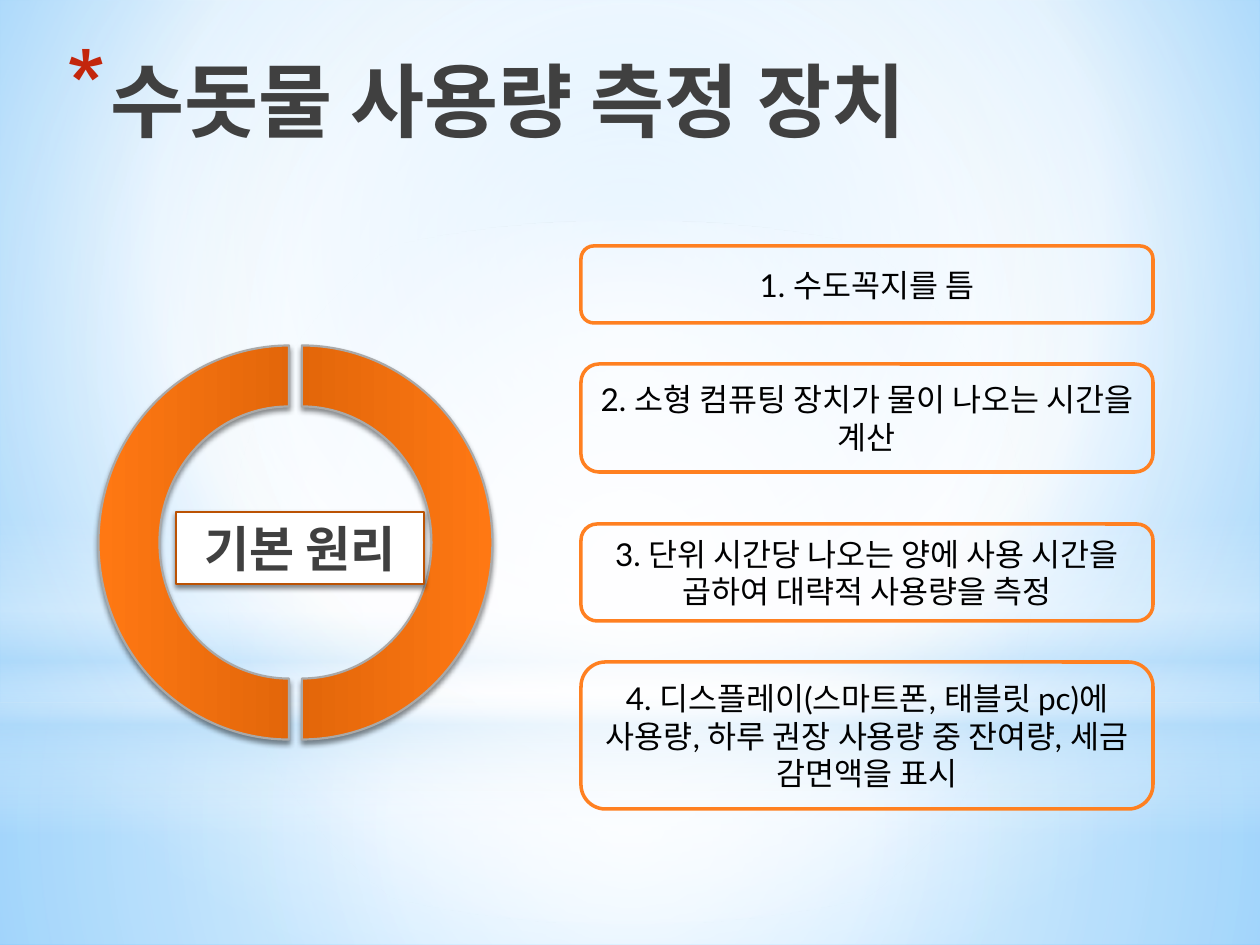
from pptx import Presentation, util as u
from pptx.dml import color
from pptx.enum import shapes, text
from pptx.oxml import ns, parse_xml

SCALE = 914400 / 126
WIDTH, HEIGHT = 1260, 945
FONT = "Lato"
CENTER = (50, 50, 50, 50)
STEPS = [
    (246, 77, "1. 수도꼭지를 틈"),
    (364, 108, "2. 소형 컴퓨팅 장치가 물이 나오는 시간을 계산"),
    (524, 97, "3. 단위 시간당 나오는 양에 사용 시간을 곱하여 대략적 사용량을 측정"),
    (662, 147, "4. 디스플레이(스마트폰, 태블릿 pc)에 사용량, 하루 권장 사용량 중 잔여량, 세금 감면액을 표시"),
]


def px(length):
    """Turn pixels into EMU."""
    return u.Emu(round(length * SCALE))


def rgb(value):
    """Turn a hex string into a colour."""
    return color.RGBColor.from_string(value)


def xml(markup):
    """Parse one drawing element given without its namespace."""
    head, rest = markup.split(" ", 1)
    return parse_xml(f"{head} {ns.nsdecls('a')} {rest}")


def set_gradient(fill, element, stops, center=None):
    """Fill with (position, colour, opacity) stops, round a centre or downwards."""
    fill.gradient()
    marks = "".join(
        f'<a:gs pos="{position * 1000}"><a:srgbClr val="{value}">'
        f'<a:alpha val="{opacity * 1000}"/></a:srgbClr></a:gs>'
        for position, value, opacity in stops
    )
    direction = '<a:lin ang="5400000" scaled="0"/>'
    if center:
        sides = " ".join(f'{side}="{value * 1000}"' for side, value in zip("ltrb", center))
        direction = f'<a:path path="circle"><a:fillToRect {sides}/></a:path>'
    default = element.find(".//" + ns.qn("a:gradFill"))
    default.getparent().replace(
        default,
        xml(f'<a:gradFill rotWithShape="1"><a:gsLst>{marks}</a:gsLst>{direction}</a:gradFill>'),
    )


def add_shape(container, kind, box, line=None, width=1.25):
    """Add a preset shape without fill or shadow."""
    shape = container.add_shape(kind, *map(px, box))
    shape.shadow.inherit = False
    shape.fill.background()
    if line:
        shape.line.color.rgb = rgb(line)
        shape.line.width = u.Pt(width)
    else:
        shape.line.fill.background()
    return shape


def add_shadow(shape):
    """Give a shape a soft shadow below it."""
    shape.element.spPr.find(ns.qn("a:effectLst")).append(xml(
        '<a:outerShdw blurRad="39370" dist="22860" dir="5400000" rotWithShape="0">'
        '<a:srgbClr val="000000"><a:alpha val="45000"/></a:srgbClr></a:outerShdw>'
    ))


def write(shape, words, size, value, bold=False, align=text.PP_ALIGN.CENTER,
          anchor=text.MSO_ANCHOR.MIDDLE):
    """Write one paragraph into a shape and return it."""
    frame = shape.text_frame
    frame.word_wrap = True
    frame.vertical_anchor = anchor
    paragraph = frame.paragraphs[0]
    paragraph.alignment = align
    run = paragraph.add_run()
    run.text = words
    run.font.name = FONT
    run.font.size = u.Pt(size)
    run.font.bold = bold
    run.font.color.rgb = rgb(value)
    return paragraph


def add_backdrop(slide):
    """Paint the sky-like background and its layers of light."""
    set_gradient(slide.background.fill, slide.element,
                 [(0, "9ED5FF", 100), (60, "FFFFFF", 100), (100, "5BB9FF", 100)],
                 (20, 10, 20, 60))
    rectangle, ellipse = shapes.MSO_SHAPE.RECTANGLE, shapes.MSO_SHAPE.OVAL
    layers = [
        (rectangle, 703, 242, CENTER,
         [(0, "FFFFFF", 91), (37, "FFFFFF", 76), (100, "B4DCFA", 79)]),
        (rectangle, 0, 703, CENTER,
         [(0, "FFFFFF", 89), (48, "FFFFFF", 62), (100, "B4DCFA", 79)]),
        (rectangle, 519, 315, None,
         [(0, "FFFFFF", 0), (29, "FFFFFF", 30), (45, "B4DCFA", 40),
          (55, "FFFFFF", 26), (65, "B4DCFA", 60), (100, "FFFFFF", 0)]),
        (ellipse, 221, 703, CENTER, [(0, "FFFFFF", 100), (56, "FFFFFF", 0)]),
    ]
    for kind, top, height, center, stops in layers:
        layer = add_shape(slide.shapes, kind, (0, top, WIDTH, height))
        set_gradient(layer.fill, layer.element, stops, center)


def add_title(slide):
    """Add the title with its red asterisk bullet."""
    title = slide.shapes.add_textbox(*map(px, (54, 45, 994, 158)))
    paragraph = write(title, "수돗물 사용량 측정 장치", 46, "404040", True,
                      text.PP_ALIGN.LEFT, text.MSO_ANCHOR.TOP)
    properties = paragraph._p.get_or_add_pPr()
    properties.set("marL", str(px(44)))
    properties.set("indent", str(px(-44)))
    for markup in ('<a:buClr ><a:srgbClr val="C3260C"/></a:buClr>',
                   '<a:buSzPct val="128000"/>',
                   '<a:buChar char="*"/>'):
        properties.append(xml(markup))


def add_ring(slide):
    """Add the ring of two half arcs with its label."""
    ring = slide.shapes.add_group_shape().shapes
    for left, flip in ((105, "flipH"), (92, "flipV")):
        arc = add_shape(ring, shapes.MSO_SHAPE.BLOCK_ARC, (left, 352, 394, 381), "A9A9A9")
        for index, value in enumerate((108, 0, 0.16)):
            arc.adjustments[index] = value
        arc.rotation = 90
        arc.element.spPr.find(ns.qn("a:xfrm")).set(flip, "1")
        set_gradient(arc.fill, arc.element, [(0, "FF7813", 100), (100, "C45400", 100)])
        add_shadow(arc)
    label = add_shape(ring, shapes.MSO_SHAPE.RECTANGLE, (176, 512, 248, 72), "BB5203")
    label.fill.solid()
    label.fill.fore_color.rgb = rgb("FFFFFF")
    add_shadow(label)
    write(label, "기본 원리", 28, "404040", True)


def add_step(slide, top, height, words):
    """Add one outlined step box."""
    step = add_shape(slide.shapes, shapes.MSO_SHAPE.ROUNDED_RECTANGLE,
                     (581, top, 572, height), "FF8021", 2)
    write(step, words, 18, "000000")


def main():
    """Build the slide and save it."""
    presentation = Presentation()
    presentation.slide_width, presentation.slide_height = px(WIDTH), px(HEIGHT)
    slide = presentation.slides.add_slide(presentation.slide_layouts[6])
    add_backdrop(slide)
    add_title(slide)
    add_ring(slide)
    for step in STEPS:
        add_step(slide, *step)
    presentation.save("out.pptx")


if __name__ == "__main__":
    main()
